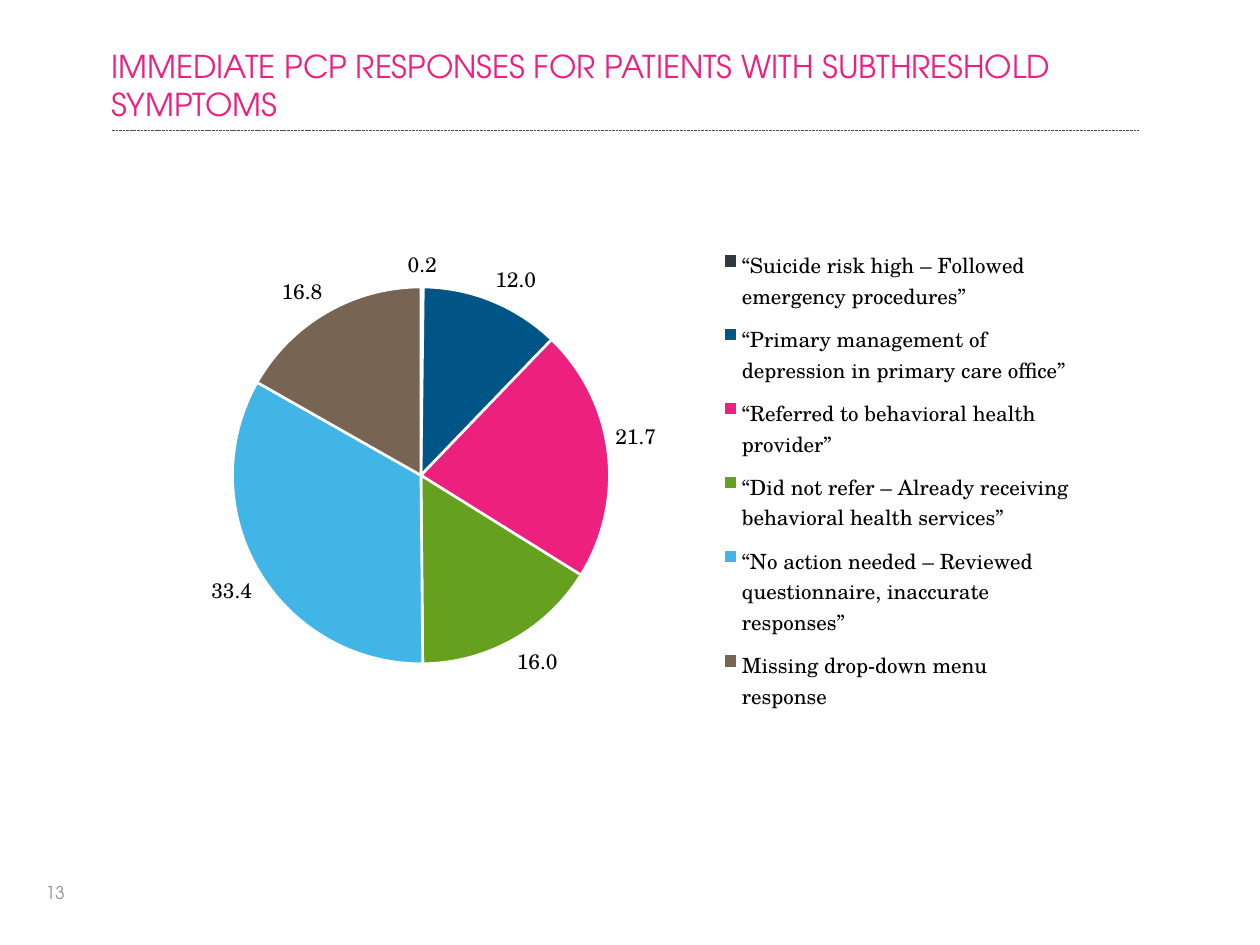
from lxml.etree import SubElement
from pptx import Presentation
from pptx.chart.data import CategoryChartData
from pptx.dml.color import RGBColor
from pptx.enum.chart import XL_CHART_TYPE as ChartType
from pptx.enum.chart import XL_LABEL_POSITION as LabelPosition
from pptx.enum.chart import XL_LEGEND_POSITION as LegendPosition
from pptx.enum.dml import MSO_LINE
from pptx.enum.shapes import MSO_CONNECTOR
from pptx.enum.text import MSO_ANCHOR, MSO_AUTO_SIZE, PP_ALIGN
from pptx.oxml.ns import qn
from pptx.util import Cm, Pt

HEADING_FONT = "TeX Gyre Adventor"
BODY_FONT = "TeX Gyre Schola"
BLACK = RGBColor(0x00, 0x00, 0x00)
WHITE = RGBColor(0xFF, 0xFF, 0xFF)
CHARCOAL = RGBColor(0x33, 0x37, 0x40)
SLATE = RGBColor(0x47, 0x4B, 0x55)
GRAY = RGBColor(0x8B, 0x91, 0x9E)
NAVY = RGBColor(0x00, 0x55, 0x87)
PINK = RGBColor(0xED, 0x1F, 0x7F)
GREEN = RGBColor(0x65, 0xA0, 0x1E)
SKY = RGBColor(0x41, 0xB6, 0xE6)
BROWN = RGBColor(0x78, 0x64, 0x52)

RESPONSES = [
    ("“Suicide risk high – Followed emergency procedures”", 0.2, CHARCOAL),
    ("“Primary management of depression in primary care office”", 12.0, NAVY),
    ("“Referred to behavioral health provider”", 21.7, PINK),
    ("“Did not refer – Already receiving behavioral health services”", 16.0, GREEN),
    ("“No action needed – Reviewed questionnaire, inaccurate responses”", 33.4, SKY),
    ("Missing drop-down menu response", 16.8, BROWN),
]


def style_font(font, name, size, color):
    font.name = name
    font.size = Pt(size)
    font.color.rgb = color


def fill_text(shape, text, size, color):
    frame = shape.text_frame
    frame.word_wrap = True
    frame.auto_size = MSO_AUTO_SIZE.NONE
    frame.vertical_anchor = MSO_ANCHOR.TOP
    frame.text = text
    para = frame.paragraphs[0]
    para.alignment = PP_ALIGN.LEFT
    style_font(para.font, HEADING_FONT, size, color)


def add_title(slide, text):
    title = slide.shapes.title
    title.left, title.top = Cm(1.99), Cm(0.83)
    title.width, title.height = Cm(20.96), Cm(1.4)
    fill_text(title, text, 18, PINK)


def add_title_rule(slide):
    y = Cm(2.63)
    rule = slide.shapes.add_connector(
        MSO_CONNECTOR.STRAIGHT, Cm(2.26), y, Cm(22.96), y)
    rule.line.color.rgb = SLATE
    rule.line.width = Pt(0.5)
    rule.line.dash_style = MSO_LINE.SQUARE_DOT
    SubElement(rule.element.spPr, qn("a:effectLst"))


def add_page_number(slide, number):
    box = slide.shapes.add_textbox(Cm(0.67), Cm(17.65), Cm(5.92), Cm(1.02))
    fill_text(box, number, 10, GRAY)


def set_layout(part, position, x, y, w, h, inner=False):
    """Place a chart part by fractions of the chart's size.

    position is where a missing layout element goes among the part's children.
    """
    layout = part.find(qn("c:layout"))
    if layout is None:
        layout = SubElement(part, qn("c:layout"))
        part.insert(position, layout)
    manual = SubElement(layout, qn("c:manualLayout"))
    settings = [("layoutTarget", "inner")] if inner else []
    settings += [("xMode", "edge"), ("yMode", "edge"),
                 ("x", x), ("y", y), ("w", w), ("h", h)]
    for tag, value in settings:
        SubElement(manual, qn(f"c:{tag}")).set("val", str(value))


def style_slices(series):
    for index, (_, _, color) in enumerate(RESPONSES):
        slice_format = series.points[index].format
        slice_format.fill.solid()
        slice_format.fill.fore_color.rgb = color
        slice_format.line.color.rgb = WHITE
        slice_format.line.width = Pt(1.5)


def style_labels(labels):
    labels.show_value = True
    labels.number_format = "0.0"
    labels.number_format_is_linked = False
    labels.position = LabelPosition.OUTSIDE_END
    style_font(labels.font, BODY_FONT, 12, BLACK)


def add_legend(chart):
    chart.has_legend = True
    legend = chart.legend
    legend.position = LegendPosition.RIGHT
    legend.include_in_layout = False
    style_font(legend.font, BODY_FONT, 12, BLACK)


def add_response_pie(slide):
    data = CategoryChartData(number_format="0.0")
    data.categories = [name for name, _, _ in RESPONSES]
    data.add_series("Series 1", [value for _, value, _ in RESPONSES])
    chart = slide.shapes.add_chart(
        ChartType.PIE, Cm(3.18), Cm(4.47), Cm(18.62), Cm(10.13), data).chart
    chart.has_title = False
    style_font(chart.font, BODY_FONT, 10, BLACK)

    plot = chart.plots[0]
    plot.vary_by_categories = True
    style_slices(plot.series[0])
    style_labels(plot.series[0].data_labels)
    add_legend(chart)

    chart_root = chart.element.chart
    set_layout(chart_root.plotArea, 0, 0.08, 0.13, 0.41, 0.75, inner=True)
    set_layout(chart_root.find(qn("c:legend")), 1, 0.61, 0.03, 0.38, 0.97)


def main():
    deck = Presentation()
    deck.slide_width, deck.slide_height = Cm(25.4), Cm(19.05)
    slide = deck.slides.add_slide(deck.slide_layouts[5])
    add_title_rule(slide)
    add_title(slide, "IMMEDIATE PCP RESPONSES FOR PATIENTS WITH SUBTHRESHOLD SYMPTOMS")
    add_page_number(slide, "13")
    add_response_pie(slide)
    deck.save("out.pptx")


if __name__ == "__main__":
    main()
